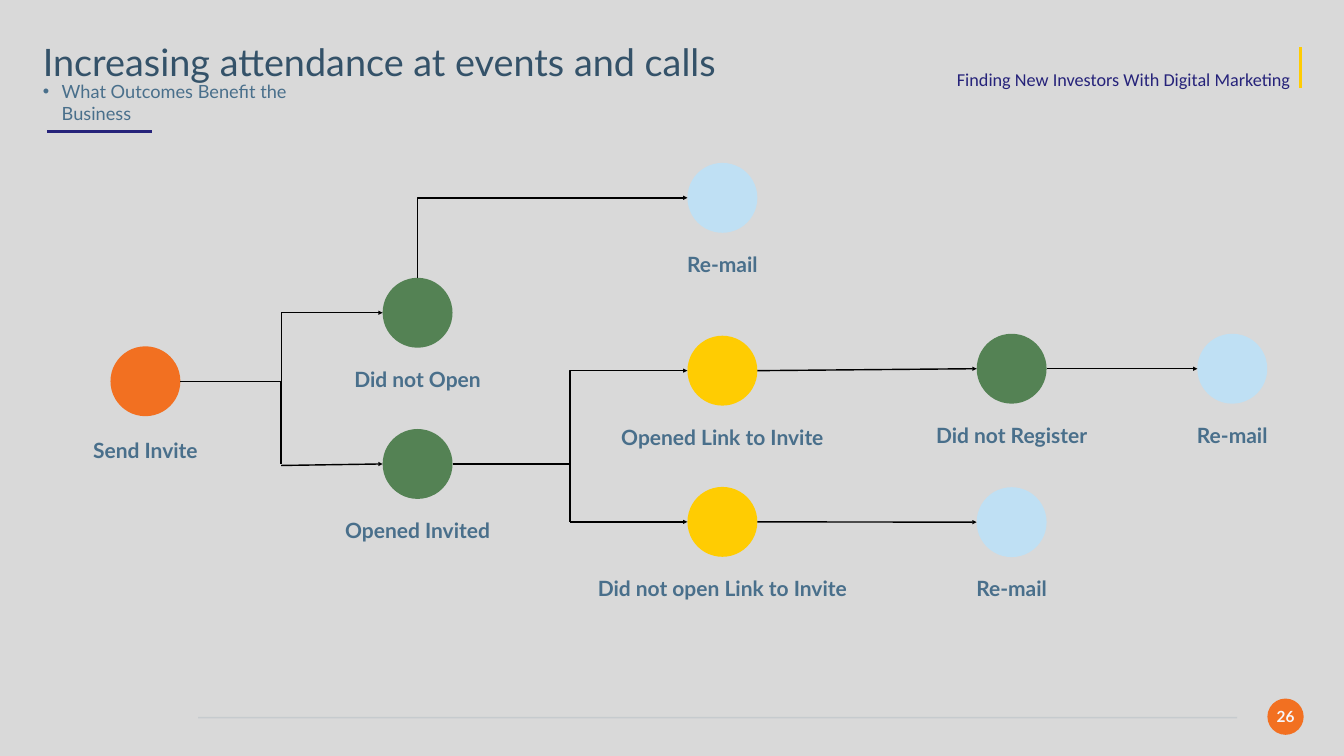
from dataclasses import dataclass

from lxml import etree
from pptx import Presentation
from pptx.dml.color import RGBColor
from pptx.enum.shapes import MSO_CONNECTOR, MSO_SHAPE
from pptx.enum.text import MSO_ANCHOR, MSO_AUTO_SIZE, PP_ALIGN
from pptx.oxml.ns import qn
from pptx.util import Inches, Pt

STRAIGHT, ELBOW = MSO_CONNECTOR.STRAIGHT, MSO_CONNECTOR.ELBOW
OVAL = MSO_SHAPE.OVAL
LEFT, CENTER, RIGHT = PP_ALIGN.LEFT, PP_ALIGN.CENTER, PP_ALIGN.RIGHT
TOP, MIDDLE = MSO_ANCHOR.TOP, MSO_ANCHOR.MIDDLE

WIDTH, HEIGHT = Inches(26.67), Inches(15)
COLORS = {
    "background": "D9D9D9", "title": "345269", "text": "496F8B", "navy": "26237A",
    "orange": "F27021", "green": "548254", "yellow": "FFCC02", "sky": "BFE0F4",
    "black": "000000", "page": "F6F6FA",
}

# All positions are percentages of the slide's width (x) and height (y)
RADIUS = 2.6
LABEL_DROP, LABEL_HEIGHT = 8.75, 4.13
COLS = [10.82, 31.07, 53.75, 75.27, 91.69]
FORK_1, FORK_2 = 20.92, 42.41


@dataclass
class Node:
    label: str
    col: int
    y: float
    color: str
    label_width: float
    drop: float = LABEL_DROP

    @property
    def x(self) -> float:
        return COLS[self.col]

    @property
    def left(self) -> tuple[float, float]:
        return self.x - RADIUS, self.y

    @property
    def right(self) -> tuple[float, float]:
        return self.x + RADIUS, self.y


def px(share: float) -> int:
    return round(WIDTH * share / 100)


def py(share: float) -> int:
    return round(HEIGHT * share / 100)


def rgb(name: str) -> RGBColor:
    return RGBColor.from_string(COLORS[name])


def format_text(sp, text: str, size: int, color: str, font: str = "Lato",
                align=LEFT, bold: bool = False, anchor=MIDDLE) -> None:
    tf = sp.text_frame
    tf.text = text
    tf.word_wrap = False
    tf.auto_size = MSO_AUTO_SIZE.SHAPE_TO_FIT_TEXT
    tf.vertical_anchor = anchor
    tf.margin_left = tf.margin_right = tf.margin_top = tf.margin_bottom = Inches(0.06)
    p = tf.paragraphs[0]
    p.alignment = align
    p.space_before = Pt(0)
    f = p.runs[0].font
    f.name, f.size, f.bold = font, Pt(size), bold
    f.color.rgb = rgb(color)


def place(sp, x: float, y: float, w: float, h: float) -> None:
    sp.left, sp.top, sp.width, sp.height = px(x), py(y), px(w), py(h)


def add_text(slide, box: tuple[float, float, float, float], *args, **kwargs):
    x, y, w, h = box
    sp = slide.shapes.add_textbox(px(x), py(y), px(w), py(h))
    format_text(sp, *args, **kwargs)
    return sp


def add_circle(slide, x: float, y: float, radius: float, color: str) -> None:
    r = px(radius)
    sp = slide.shapes.add_shape(OVAL, px(x) - r, py(y) - r, 2 * r, 2 * r)
    sp.shadow.inherit = False
    sp.fill.solid()
    sp.fill.fore_color.rgb = rgb(color)
    sp.line.fill.background()


def add_node(slide, node: Node) -> None:
    add_circle(slide, node.x, node.y, RADIUS, node.color)
    box = (node.x - node.label_width / 2, node.y + node.drop - LABEL_HEIGHT / 2,
           node.label_width, LABEL_HEIGHT)
    add_text(slide, box, node.label, 30, "text", align=CENTER, bold=True)


def add_line(slide, start: tuple[float, float], end: tuple[float, float],
             color: str = "black", width: float = 2, arrow: bool = False, kind=STRAIGHT):
    c = slide.shapes.add_connector(kind, px(start[0]), py(start[1]), px(end[0]), py(end[1]))
    c.line.color.rgb = rgb(color)
    c.line.width = Pt(width)
    if arrow:
        etree.SubElement(c.line._get_or_add_ln(), qn("a:tailEnd"), type="triangle")
    etree.SubElement(c._element.spPr, qn("a:effectLst"))
    return c


def add_corner(slide, start: tuple[float, float], end: tuple[float, float]) -> None:
    """Arrow that goes up from start, then right to end: a quarter-turned elbow."""
    c = add_line(slide, start, end, arrow=True, kind=ELBOW)
    cx, cy = c.left + c.width // 2, c.top + c.height // 2
    c.width, c.height = c.height, c.width
    c.left, c.top = cx - c.width // 2, cy - c.height // 2
    xfrm = c._element.spPr.find(qn("a:xfrm"))
    for name, value in (("rot", "5400000"), ("flipH", "1"), ("flipV", "1")):
        xfrm.set(name, value)
    c._element.spPr.find(qn("a:prstGeom")).set("prst", "bentConnector2")


def add_frame(slide) -> None:
    # Footer rule and page number
    add_circle(slide, 95.65, 94.8, 1.35, "orange")
    rule = add_line(slide, (14.74, 94.93), (92.05, 94.93), "text")
    etree.SubElement(next(rule._element.iter(qn("a:srgbClr"))), qn("a:alpha"), val="12000")
    add_text(slide, (94.75, 93.13, 1.8, 3.27), "26", 22, "page",
             align=CENTER, bold=True, anchor=TOP)
    # Header accents and section name
    add_line(slide, (3.49, 17.4), (11.29, 17.4), "navy", 5)
    add_line(slide, (96.74, 11.67), (96.74, 6.2), "yellow", 4)
    sp = add_text(slide, (70.6, 8.2, 25.65, 4), "Finding New Investors With Digital Marketing",
                  26, "navy", font="Calibri", align=RIGHT)
    sp.text_frame.paragraphs[0].line_spacing = 1.2


def add_titles(slide) -> None:
    title, body = slide.shapes.title, slide.placeholders[1]
    place(title, 2.96, 4.67, 51.59, 6.8)
    format_text(title, "Increasing attendance at events and calls", 54, "title")
    place(body, 2.96, 11.73, 22.98, 3.67)
    body.text_frame.text = ""
    pPr = body.text_frame.paragraphs[0]._p.get_or_add_pPr()
    pPr.set("marL", "0")
    pPr.set("indent", "0")
    etree.SubElement(pPr, qn("a:buNone"))
    format_text(body, "What Outcomes Benefit the Business", 26, "text")


def add_flow(slide) -> None:
    send = Node("Send Invite", 0, 50.43, "orange", 8.74, 9.1)
    not_open = Node("Did not Open", 1, 41.37, "green", 10.39)
    opened = Node("Opened Invited", 1, 61.37, "green", 11.89)
    remail_top = Node("Re-mail", 2, 26.17, "sky", 6.15)
    link = Node("Opened Link to Invite", 2, 49.03, "yellow", 16.42)
    no_link = Node("Did not open Link to Invite", 2, 69.03, "yellow", 20.36)
    not_registered = Node("Did not Register", 3, 48.77, "green", 12.52)
    remail_low = Node("Re-mail", 3, 69.07, "sky", 6.15)
    remail_end = Node("Re-mail", 4, 48.77, "sky", 6.15)
    for node in (send, not_open, opened, remail_top, link, no_link,
                 not_registered, remail_low, remail_end):
        add_node(slide, node)

    # Forks: an elbow to the upper branch, a stem and an arrow to the lower one
    for source, upper, lower, fork, gap in ((send, not_open, opened, FORK_1, 0.2),
                                            (opened, link, no_link, FORK_2, 0)):
        add_line(slide, source.right, upper.left, arrow=True, kind=ELBOW)
        add_line(slide, (fork, source.y), (fork, lower.y))
        add_line(slide, (fork, lower.y + gap), lower.left, arrow=True)

    # Follow-up steps
    add_corner(slide, (not_open.x, not_open.y - RADIUS * WIDTH / HEIGHT), remail_top.left)
    for source, target in ((link, not_registered), (not_registered, remail_end),
                           (no_link, remail_low)):
        add_line(slide, source.right, target.left, arrow=True)


def main() -> None:
    prs = Presentation()
    prs.slide_width, prs.slide_height = WIDTH, HEIGHT
    slide = prs.slides.add_slide(prs.slide_layouts[1])
    slide.background.fill.solid()
    slide.background.fill.fore_color.rgb = rgb("background")
    add_frame(slide)
    add_titles(slide)
    add_flow(slide)
    prs.save("out.pptx")


if __name__ == "__main__":
    main()
